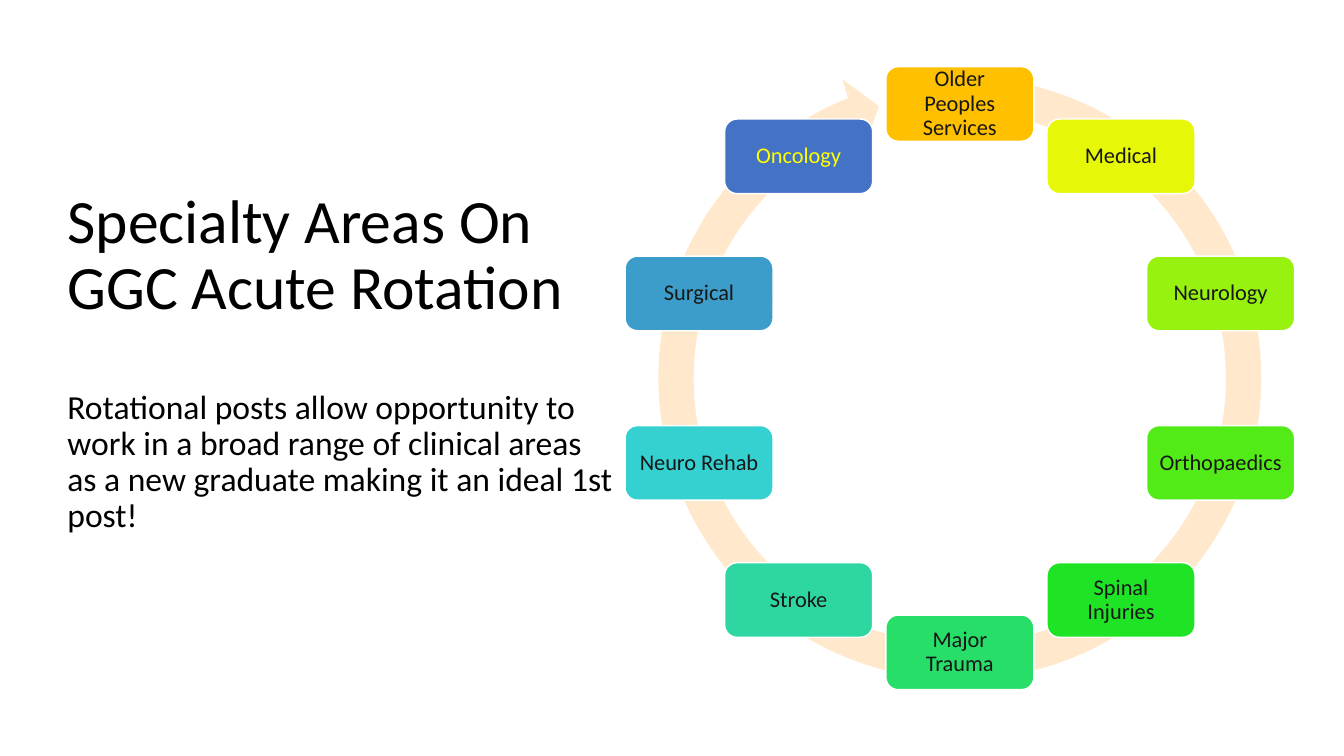
import math

import pptx
import pptx.dml.color
import pptx.enum.shapes
import pptx.enum.text
import pptx.util

Cm = pptx.util.Cm
Pt = pptx.util.Pt
SHAPE = pptx.enum.shapes.MSO_SHAPE
ALIGN = pptx.enum.text.PP_ALIGN
MIDDLE = pptx.enum.text.MSO_ANCHOR.MIDDLE

# Ring geometry in centimetres
CENTRE_X, CENTRE_Y = 24.19, 9.53
RADIUS = 6.91
RING_SIZE = 16.18
BOX_WIDTH, BOX_HEIGHT = 3.73, 1.88

DARK = "181717"
# Specialties clockwise from the top: label, fill, text colour
SPECIALTIES = [
    ("Older Peoples Services", "FFC000", DARK),
    ("Medical", "E6F808", DARK),
    ("Neurology", "98F20F", DARK),
    ("Orthopaedics", "53EB17", DARK),
    ("Spinal Injuries", "1FE426", DARK),
    ("Major Trauma", "26DE68", DARK),
    ("Stroke", "2ED7A1", DARK),
    ("Neuro Rehab", "35D1D1", DARK),
    ("Surgical", "3D9DCA", DARK),
    ("Oncology", "4472C4", "FFFF00"),
]


def colour(value):
    return pptx.dml.color.RGBColor.from_string(value)


def apply_format(target, values):
    for name, value in values.items():
        setattr(target, name, value)


def write_paragraph(para, text, size, text_colour, **layout):
    apply_format(para, {"line_spacing": 0.9, **layout})
    span = para.add_run()
    span.text = text
    apply_format(span.font, {"name": "Calibri", "size": Pt(size)})
    span.font.color.rgb = colour(text_colour)


def add_centred_shape(page, kind, x, y, width, height, fill):
    """Add a filled preset shape around the centre point x, y."""
    shape = page.shapes.add_shape(
        kind, Cm(x - width / 2), Cm(y - height / 2), Cm(width), Cm(height))
    shape.shadow.inherit = False
    shape.fill.solid()
    shape.fill.fore_color.rgb = colour(fill)
    return shape


def add_heading(page):
    box = page.shapes.add_textbox(Cm(1.45), Cm(1.4), Cm(14.33), Cm(15.47))
    frame = box.text_frame
    apply_format(frame, {"word_wrap": True, "vertical_anchor": MIDDLE})
    write_paragraph(frame.paragraphs[0], "Specialty Areas On GGC Acute Rotation",
                    44, "000000")
    write_paragraph(
        frame.add_paragraph(),
        "Rotational posts allow opportunity to work in a broad range of "
        "clinical areas as a new graduate making it an ideal 1st post!",
        24, "000000", space_before=Pt(48))


def add_ring_arrow(page):
    ring = add_centred_shape(page, SHAPE.CIRCULAR_ARROW, CENTRE_X, CENTRE_Y,
                             RING_SIZE, RING_SIZE, "FFE8CC")
    ring.line.fill.background()
    # Band thickness, head angle, end angle, start angle, head width
    for index, value in enumerate([0.055, 3.307, 148.743, 167.475, 0.058]):
        ring.adjustments[index] = value


def add_specialty(page, angle, label, fill, text_colour):
    box = add_centred_shape(
        page, SHAPE.ROUNDED_RECTANGLE,
        CENTRE_X + RADIUS * math.sin(angle), CENTRE_Y - RADIUS * math.cos(angle),
        BOX_WIDTH, BOX_HEIGHT, fill)
    box.line.color.rgb = colour("FFFFFF")
    box.line.width = Pt(1)
    inset = Cm(0.2)
    apply_format(box.text_frame, {
        "word_wrap": True, "vertical_anchor": MIDDLE,
        "margin_left": inset, "margin_right": inset,
        "margin_top": inset, "margin_bottom": inset})
    write_paragraph(box.text_frame.paragraphs[0], label, 16, text_colour,
                    alignment=ALIGN.CENTER)


def main():
    deck = pptx.Presentation()
    apply_format(deck, {"slide_width": Cm(33.87), "slide_height": Cm(19.05)})
    page = deck.slides.add_slide(deck.slide_layouts[6])

    # Title and explanation on the left
    add_heading(page)

    # Rotation cycle on the right
    add_ring_arrow(page)
    step = 2 * math.pi / len(SPECIALTIES)
    for index, specialty in enumerate(SPECIALTIES):
        add_specialty(page, index * step, *specialty)

    deck.save("out.pptx")


if __name__ == "__main__":
    main()
